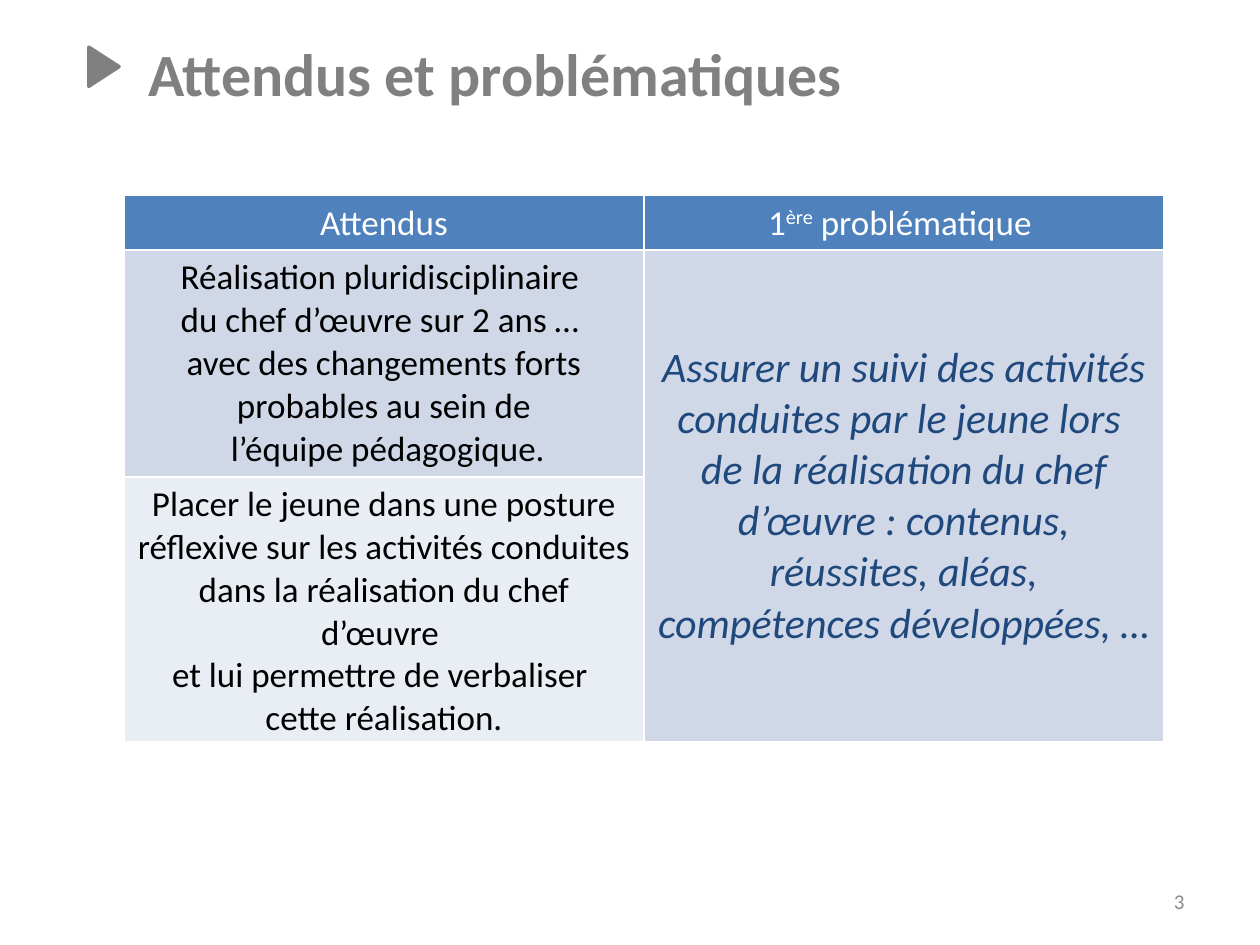
from lxml import etree
from pptx import Presentation
from pptx.dml.color import RGBColor
from pptx.enum import shapes, text
from pptx.oxml import ns
from pptx.util import Cm, Pt

GREY = RGBColor(0x80, 0x80, 0x80)
NUMBER_GREY = RGBColor(0x8C, 0x8C, 0x8C)
WHITE = RGBColor(0xFF, 0xFF, 0xFF)
BLACK = RGBColor(0, 0, 0)
NAVY = RGBColor(0x1F, 0x49, 0x7D)
HEADER_BLUE = RGBColor(0x4F, 0x81, 0xBD)
BAND_DARK = RGBColor(0xD0, 0xD8, 0xE8)
BAND_LIGHT = RGBColor(0xE9, 0xED, 0xF4)
FONT = "Calibri"
SUPERSCRIPT = "30000"

TITLE = "Attendus et problématiques"
PAGE_NUMBER = "3"

HEADER_STYLE = dict(size=20, color=WHITE)
BODY_STYLE = dict(size=20, color=BLACK)
QUESTION_STYLE = dict(size=24, color=NAVY, italic=True)

# (row, column), fill, style, paragraphs; a paragraph is a list of (text, baseline) runs
CELLS = [
    ((0, 0), HEADER_BLUE, HEADER_STYLE, [[("Attendus", None)]]),
    ((0, 1), HEADER_BLUE, HEADER_STYLE,
     [[("1", None), ("ère", SUPERSCRIPT), (" problématique ", None)]]),
    ((1, 0), BAND_DARK, BODY_STYLE, [
        [("Réalisation pluridisciplinaire ", None)],
        [("du chef d’œuvre sur 2 ans … ", None)],
        [("avec des changements forts probables au sein de", None)],
        [(" l’équipe pédagogique.", None)]]),
    ((1, 1), BAND_DARK, QUESTION_STYLE, [
        [("Assurer un suivi des activités conduites par le jeune lors ", None)],
        [("de la réalisation du chef d’œuvre : contenus, réussites, aléas, "
          "compétences développées, …", None)]]),
    ((2, 0), BAND_LIGHT, BODY_STYLE, [
        [("Placer le jeune dans une posture réflexive sur les activités conduites ", None)],
        [("dans la réalisation du chef d’œuvre ", None)],
        [("et lui permettre de verbaliser ", None)],
        [("cette réalisation.", None)]]),
]
COLUMN_WIDTH = 10.48
ROW_HEIGHTS = [1.08, 4.57, 4.57]


def write(frame, paragraphs, align, size, color, bold=False, italic=False):
    for index, runs in enumerate(paragraphs):
        paragraph = frame.add_paragraph() if index else frame.paragraphs[0]
        paragraph.alignment = align
        for words, baseline in runs:
            run = paragraph.add_run()
            run.text = words
            font = run.font
            font.name, font.size = FONT, Pt(size)
            font.bold, font.italic = bold, italic
            font.color.rgb = color
            if baseline:
                run._r.get_or_add_rPr().set("baseline", baseline)


def add_label(slide, box, words, align, **style):
    frame = slide.shapes.add_textbox(*map(Cm, box)).text_frame
    frame.word_wrap = True
    frame.vertical_anchor = text.MSO_ANCHOR.MIDDLE
    write(frame, [[(words, None)]], align, **style)


def add_borders(cell):
    properties = cell._tc.get_or_add_tcPr()
    for side in ("lnL", "lnR", "lnT", "lnB"):
        line = etree.SubElement(properties, ns.qn(f"a:{side}"), w=str(Pt(1)))
        fill = etree.SubElement(line, ns.qn("a:solidFill"))
        etree.SubElement(fill, ns.qn("a:srgbClr"), val=str(WHITE))


def add_marker(slide):
    marker = slide.shapes.add_shape(
        shapes.MSO_SHAPE.ISOSCELES_TRIANGLE, Cm(1.7), Cm(1.04), Cm(0.79), Cm(0.61))
    marker.rotation = 90
    marker.shadow.inherit = False
    marker.fill.solid()
    marker.fill.fore_color.rgb = GREY
    marker.line.color.rgb = GREY
    marker.line.width = Pt(2)
    etree.SubElement(marker.line._get_or_add_ln(), ns.qn("a:round"))


def add_expectations_table(slide):
    table = slide.shapes.add_table(
        len(ROW_HEIGHTS), 2, Cm(2.5), Cm(3.94),
        Cm(2 * COLUMN_WIDTH), Cm(sum(ROW_HEIGHTS))).table
    for column in table.columns:
        column.width = Cm(COLUMN_WIDTH)
    for row, height in zip(table.rows, ROW_HEIGHTS):
        row.height = Cm(height)
    table.cell(1, 1).merge(table.cell(2, 1))
    for cell in table.iter_cells():
        add_borders(cell)
        cell.fill.solid()
        cell.fill.fore_color.rgb = BAND_DARK
    for position, fill, style, paragraphs in CELLS:
        cell = table.cell(*position)
        cell.fill.fore_color.rgb = fill
        cell.vertical_anchor = text.MSO_ANCHOR.MIDDLE
        write(cell.text_frame, paragraphs, text.PP_ALIGN.CENTER, **style)


def main():
    presentation = Presentation()
    presentation.slide_width, presentation.slide_height = Cm(25.4), Cm(19.05)
    slide = presentation.slides.add_slide(presentation.slide_layouts[6])
    add_marker(slide)
    add_label(slide, (18.21, 17.65, 5.92, 1.02), PAGE_NUMBER,
              text.PP_ALIGN.RIGHT, size=12, color=NUMBER_GREY)
    add_label(slide, (-0.5, 0.48, 20.96, 1.98), TITLE,
              text.PP_ALIGN.CENTER, size=34.2, color=GREY, bold=True)
    add_expectations_table(slide)
    presentation.save("out.pptx")


if __name__ == "__main__":
    main()
